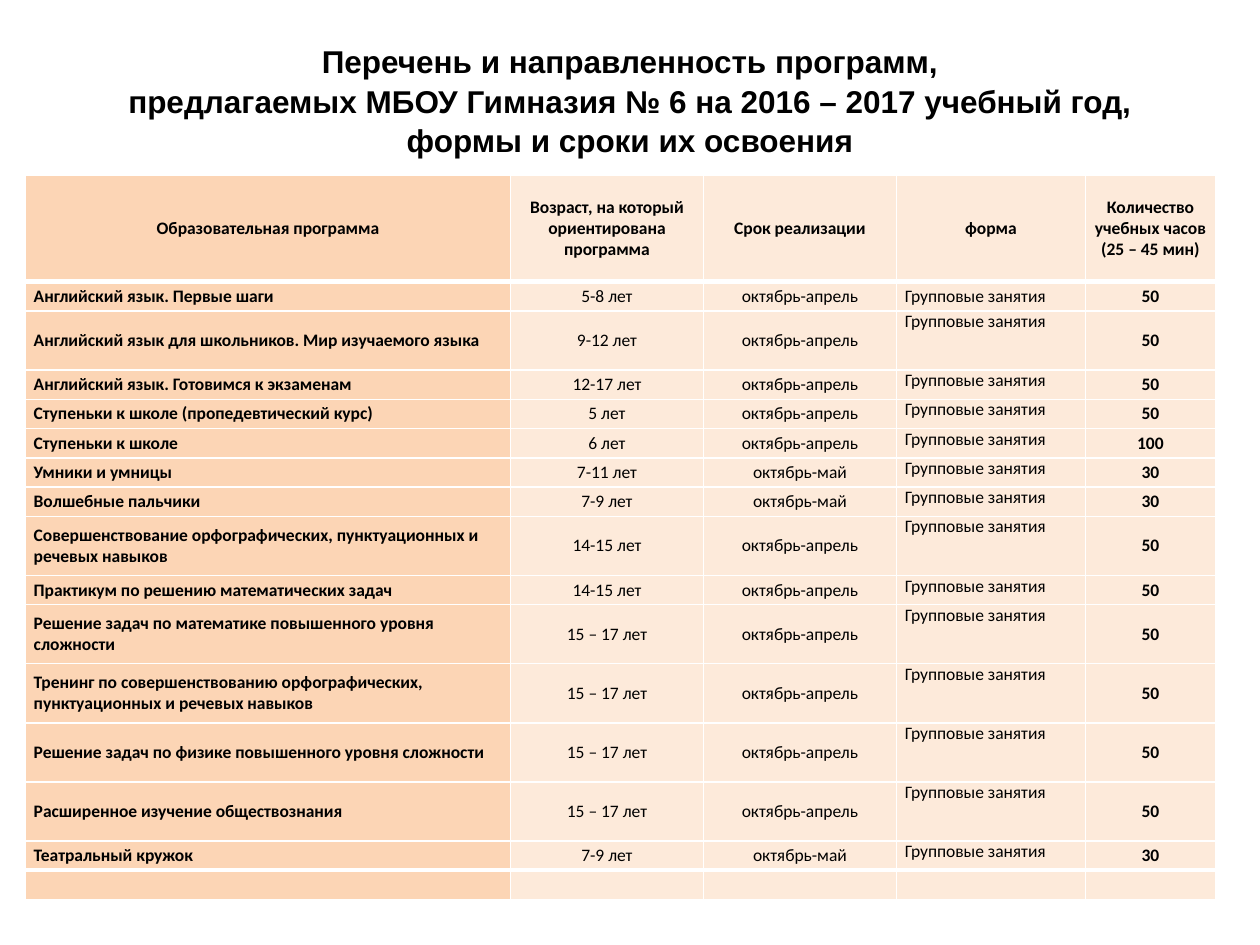
from lxml import etree
from pptx import Presentation
from pptx.dml.color import RGBColor
from pptx.enum.text import MSO_ANCHOR, PP_ALIGN
from pptx.oxml.ns import qn
from pptx.util import Cm, Pt

LEFT, CENTER = PP_ALIGN.LEFT, PP_ALIGN.CENTER
TOP, MIDDLE = MSO_ANCHOR.TOP, MSO_ANCHOR.MIDDLE

COLORS = {"text": "000000", "border": "FFFFFF", "program": "FCD5B5", "detail": "FDEADA"}

TITLE = ("Перечень и направленность программ,\v"
         "предлагаемых МБОУ Гимназия №\u00a06 на 2016 – 2017 учебный год,\v"
         "формы и сроки их освоения")
HEADER = ["Образовательная программа", "Возраст, на который ориентирована программа",
          "Срок реализации", "форма", "Количество учебных часов (25 – 45 мин)"]
APRIL, MAY = "октябрь-апрель", "октябрь-май"
FORM = "Групповые занятия"
SENIOR = "15 – 17 лет"

SINGLE, DOUBLE, HEAD = 0.59, 1.19, 2.15
COLUMN_WIDTHS = [9.78, 3.89, 3.89, 3.81, 2.62]
PROGRAM_COL, FORM_COL, HOURS_COL = 0, 3, 4

# Row height, program, age, term, hours
PROGRAMS = [
    (SINGLE, "Английский язык. Первые шаги", "5-8 лет", APRIL, 50),
    (DOUBLE, "Английский язык для школьников. Мир изучаемого языка", "9-12 лет", APRIL, 50),
    (SINGLE, "Английский язык. Готовимся к экзаменам", "12-17 лет", APRIL, 50),
    (SINGLE, "Ступеньки к школе (пропедевтический курс)", "5 лет", APRIL, 50),
    (SINGLE, "Ступеньки к школе", "6 лет", APRIL, 100),
    (SINGLE, "Умники и умницы", "7-11 лет", MAY, 30),
    (SINGLE, "Волшебные пальчики", "7-9 лет", MAY, 30),
    (DOUBLE, "Совершенствование орфографических, пунктуационных и речевых навыков",
     "14-15 лет", APRIL, 50),
    (SINGLE, "Практикум по решению математических задач", "14-15 лет", APRIL, 50),
    (DOUBLE, "Решение задач по математике повышенного уровня сложности", SENIOR, APRIL, 50),
    (DOUBLE, "Тренинг по совершенствованию орфографических, пунктуационных и речевых навыков",
     SENIOR, APRIL, 50),
    (DOUBLE, "Решение задач по физике повышенного уровня сложности", SENIOR, APRIL, 50),
    (DOUBLE, "Расширенное изучение обществознания", SENIOR, APRIL, 50),
    (SINGLE, "Театральный кружок", "7-9 лет", MAY, 30),
]


def rgb(name):
    return RGBColor.from_string(COLORS[name])


def style_paragraph(p, font, size, bold, align):
    p.alignment = align
    p.font.name = font
    p.font.size = Pt(size)
    p.font.bold = bold
    p.font.color.rgb = rgb("text")


def add_title(slide):
    sp = slide.shapes.add_textbox(Cm(1.27), Cm(0.76), Cm(22.86), Cm(3.18))
    tf = sp.text_frame
    tf.word_wrap = True
    tf.vertical_anchor = MIDDLE
    tf.margin_bottom = Cm(0.81)
    p = tf.paragraphs[0]
    p.text = TITLE
    p.line_spacing = 1.05
    style_paragraph(p, "Arial", 18, True, CENTER)


def set_borders(cell, top, bottom):
    """Draw the four cell borders; top and bottom widths are in points."""
    tc_pr = cell._tc.get_or_add_tcPr()
    for side, width in (("L", 1), ("R", 1), ("T", top), ("B", bottom)):
        ln = etree.SubElement(tc_pr, qn(f"a:ln{side}"), w=str(Pt(width)))
        fill = etree.SubElement(ln, qn("a:solidFill"))
        etree.SubElement(fill, qn("a:srgbClr"), val=COLORS["border"])


def fill_cell(cell, text, fill, bold, align, anchor):
    cell.fill.solid()
    cell.fill.fore_color.rgb = rgb(fill)
    cell.margin_left = cell.margin_right = Cm(0.17)
    cell.margin_top = cell.margin_bottom = 0
    cell.vertical_anchor = anchor
    p = cell.text_frame.paragraphs[0]
    style_paragraph(p, "Calibri", 10, bold, align)
    if text:
        p.text = text
    else:
        # An empty cell keeps its row low only through its end mark's size
        etree.SubElement(p._p, qn("a:endParaRPr"), sz="1000")


def add_programs_table(slide):
    rows = [(HEAD, HEADER)]
    rows += [(height, [program, age, term, FORM, str(hours)])
             for height, program, age, term, hours in PROGRAMS]
    rows.append((SINGLE, [""] * len(HEADER)))
    last = len(rows) - 1

    frame = slide.shapes.add_table(len(rows), len(HEADER), Cm(0.51), Cm(3.53),
                                   Cm(sum(COLUMN_WIDTHS)), Cm(sum(h for h, _ in rows)))
    table = frame.table
    for column, width in zip(table.columns, COLUMN_WIDTHS):
        column.width = Cm(width)

    for i, (height, texts) in enumerate(rows):
        table.rows[i].height = Cm(height)
        for j, text in enumerate(texts):
            cell = table.cell(i, j)
            set_borders(cell, 3 if i in (1, last) else 1, 3 if i in (0, last - 1) else 1)
            fill = "program" if j == PROGRAM_COL else "detail"
            bold = i == 0 or j in (PROGRAM_COL, HOURS_COL)
            align = LEFT if i > 0 and j in (PROGRAM_COL, FORM_COL) else CENTER
            anchor = TOP if i > 1 and j == FORM_COL else MIDDLE
            fill_cell(cell, text, fill, bold, align, anchor)


def main():
    prs = Presentation()
    prs.slide_width, prs.slide_height = Cm(25.4), Cm(19.05)
    slide = prs.slides.add_slide(prs.slide_layouts[6])
    add_title(slide)
    add_programs_table(slide)
    prs.save("out.pptx")


if __name__ == "__main__":
    main()
